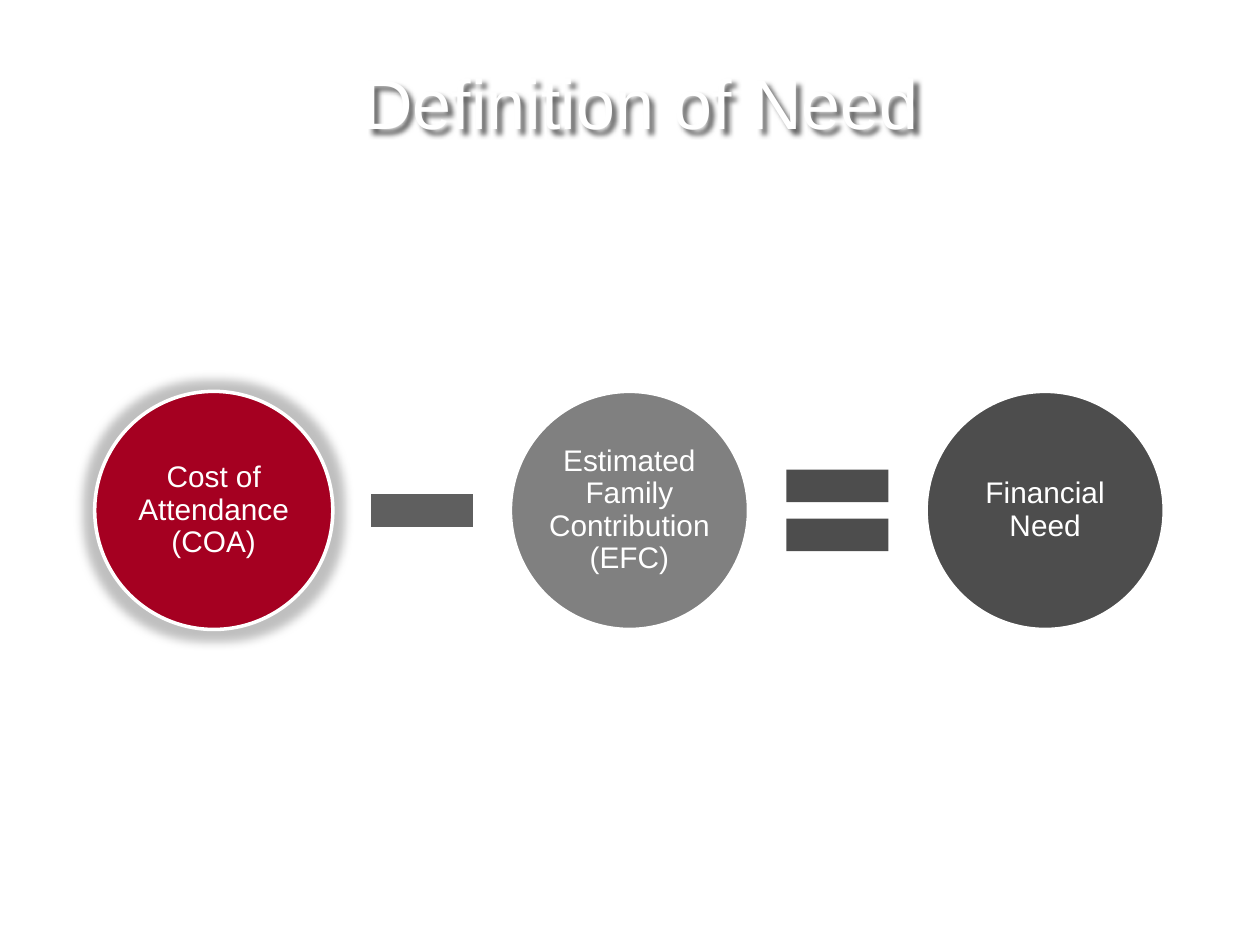
import pptx
import pptx.util
import pptx.dml.color
import pptx.enum.shapes
import pptx.enum.text
import pptx.oxml.ns
import lxml.etree

Cm = pptx.util.Cm
Pt = pptx.util.Pt
SHAPE = pptx.enum.shapes.MSO_SHAPE
COLORS = {
    "white": "FFFFFF",
    "red": "A50021",
    "gray": "808080",
    "minus": "5F5F5F",
    "dark": "4D4D4D",
    "shadow": "000000",
}


def add_effect(shape, kind, color, alpha, **settings):
    shape.shadow.inherit = False
    qn = pptx.oxml.ns.qn
    effects = shape._element.spPr.find(qn("a:effectLst"))
    effect = lxml.etree.SubElement(effects, qn("a:" + kind), settings)
    tint = lxml.etree.SubElement(effect, qn("a:srgbClr"), val=COLORS[color])
    lxml.etree.SubElement(tint, qn("a:alpha"), val=str(alpha * 1000))


def write_text(shape, text, size, margin):
    frame = shape.text_frame
    frame.text = text
    frame.word_wrap = True
    frame.vertical_anchor = pptx.enum.text.MSO_ANCHOR.MIDDLE
    frame.margin_left = frame.margin_right = margin
    frame.margin_top = frame.margin_bottom = margin
    para = frame.paragraphs[0]
    para.alignment = pptx.enum.text.PP_ALIGN.CENTER
    span = para.runs[0]
    span.font.name = "Arial"
    span.font.size = Pt(size)
    span.font.color.rgb = pptx.dml.color.RGBColor.from_string(COLORS["white"])
    return para


deck = pptx.Presentation()
deck.slide_width, deck.slide_height = Cm(25.4), Cm(19.05)
page = deck.slides.add_slide(deck.slide_layouts[6])

# Title with a soft shadow
title = page.shapes.add_textbox(Cm(1.9), Cm(1.07), Cm(22.02), Cm(1.96))
write_text(title, "Definition of Need", 40, Cm(0.13))
add_effect(title, "outerShdw", "shadow", 60,
           blurRad=str(Pt(3)), dist=str(Pt(3)), dir="2700000")

# Equation: circles and operators share one centre line and one pitch
circle_size, operator_size = 4.8, 2.8
first_center, pitch, middle = 4.31, 8.38, 10.29
parts = [
    (SHAPE.OVAL, "red", "Cost of Attendance (COA)"),
    (SHAPE.MATH_MINUS, "minus", ""),
    (SHAPE.OVAL, "gray", "Estimated Family Contribution (EFC)"),
    (SHAPE.MATH_EQUAL, "dark", ""),
    (SHAPE.OVAL, "dark", "Financial Need"),
]
for index, (kind, color, text) in enumerate(parts):
    size = circle_size if text else operator_size
    center = first_center + index * pitch / 2
    shape = page.shapes.add_shape(
        kind, Cm(center - size / 2), Cm(middle - size / 2), Cm(size), Cm(size))
    shape.shadow.inherit = False
    shape.fill.solid()
    shape.fill.fore_color.rgb = pptx.dml.color.RGBColor.from_string(COLORS[color])
    if text:
        shape.line.color.rgb = pptx.dml.color.RGBColor.from_string(COLORS["white"])
        shape.line.width = Pt(2)
        para = write_text(shape, text, 17, Cm(0.05))
        para.line_spacing = 0.9
    else:
        shape.line.fill.background()
    # Glow on the starting term
    if index == 0:
        add_effect(shape, "glow", "gray", 50, rad=str(Pt(11)))

deck.save("out.pptx")
